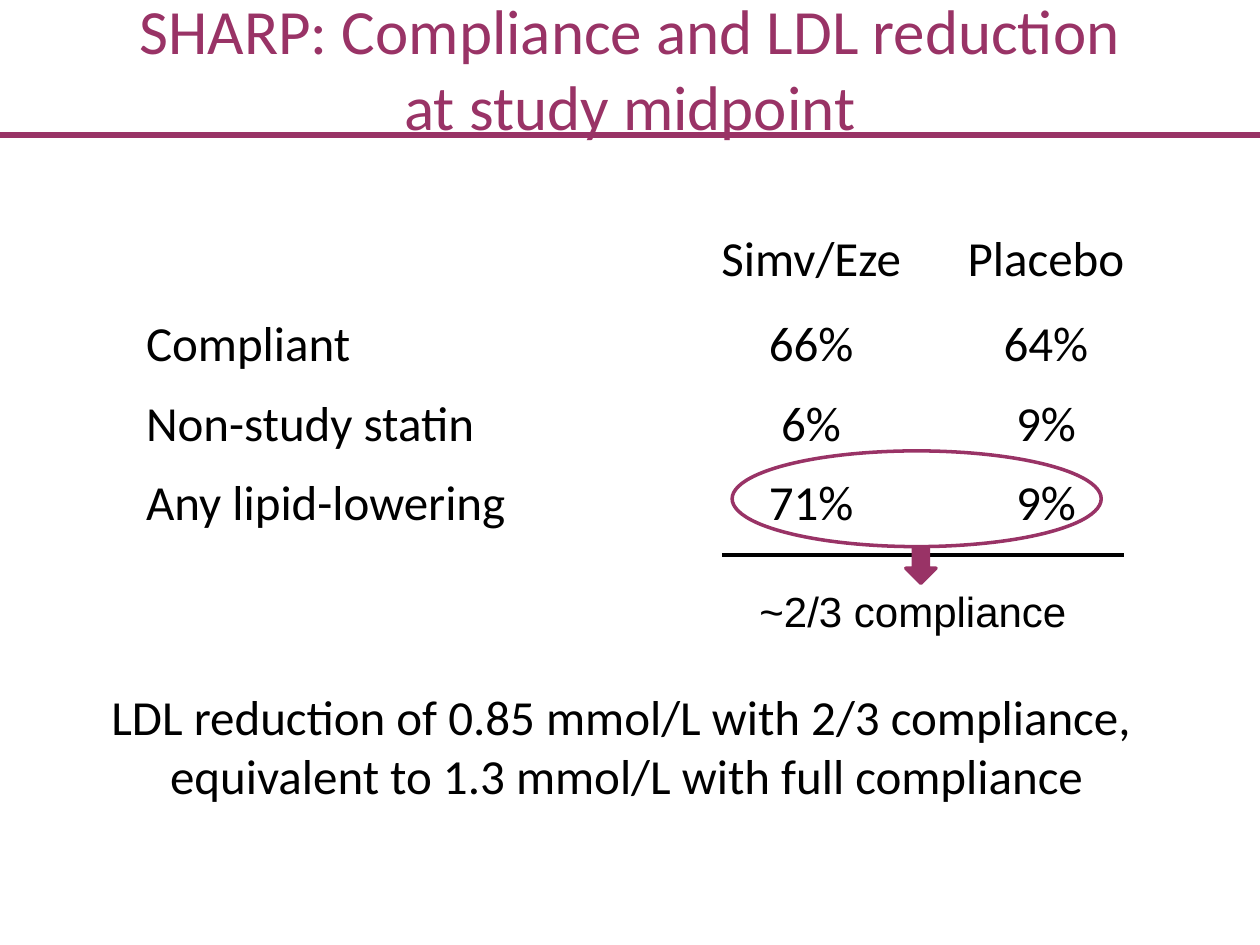
import pptx
import pptx.util
import pptx.dml.color
import pptx.enum.shapes
import pptx.enum.text
import pptx.oxml.ns
import lxml.etree
from dataclasses import dataclass

Cm, Pt = pptx.util.Cm, pptx.util.Pt
Align = pptx.enum.text.PP_ALIGN
Kind = pptx.enum.shapes.MSO_SHAPE

TITLE = "SHARP: Compliance and LDL reduction\vat study midpoint"
ROWS = [
    ("", "Simv/Eze", "Placebo"),
    ("Compliant", "66%", "64%"),
    ("Non-study statin", "6%", "9%"),
    ("Any lipid-lowering", "71%", "9%"),
    ("", "", ""),
]
NOTE = "~2/3 compliance"
RESULT = ("LDL reduction of 0.85 mmol/L with 2/3 compliance, \n"
          "equivalent to 1.3 mmol/L with full compliance")


@dataclass
class Theme:
    plum: str = "993366"
    ink: str = "000000"
    paper: str = "FFFFFF"
    main: str = "Calibri"
    plain: str = "Arial"
    head: float = 36
    body: float = 28
    small: float = 24


theme = Theme()
WIDE, HIGH, BAND = 25.4, 19.05, 2.72
COLS = (11.35, 4.62, 4.85)
TOP, FIRST, STEP = 4.5, 1.73, 1.6


def tint(code):
    return pptx.dml.color.RGBColor.from_string(code)


def style(frame, size, color, face, align):
    for para in frame.paragraphs:
        para.alignment = align
        for run in para.runs:
            run.font.size = Pt(size)
            run.font.name = face
            run.font.bold = False
            run.font.color.rgb = tint(color)


def label(slide, box, text, size, color, face, align, anchor):
    frame = slide.shapes.add_textbox(*map(Cm, box)).text_frame
    frame.word_wrap = True
    frame.vertical_anchor = anchor
    frame.text = text
    style(frame, size, color, face, align)


def rule(slide, left, right, y, color, width):
    line = slide.shapes.add_connector(
        pptx.enum.shapes.MSO_CONNECTOR.STRAIGHT, Cm(left), Cm(y), Cm(right), Cm(y))
    line.line.color.rgb = tint(color)
    line.line.width = Pt(width)
    lxml.etree.SubElement(line.element.spPr, pptx.oxml.ns.qn("a:effectLst"))


def mark(slide, kind, box, fill=None):
    shape = slide.shapes.add_shape(kind, *map(Cm, box))
    shape.shadow.inherit = False
    if fill:
        shape.fill.solid()
        shape.fill.fore_color.rgb = tint(fill)
    else:
        shape.fill.background()
    shape.line.color.rgb = tint(theme.plum)
    shape.line.width = Pt(2)


def grid(slide):
    high = FIRST + STEP * (len(ROWS) - 1)
    table = slide.shapes.add_table(
        len(ROWS), len(COLS), Cm(2.69), Cm(TOP), Cm(sum(COLS)), Cm(high)).table
    table.first_row = False
    table.horz_banding = False
    for col, width in zip(table.columns, COLS):
        col.width = Cm(width)
    for r, texts in enumerate(ROWS):
        table.rows[r].height = Cm(STEP if r else FIRST)
        for c, text in enumerate(texts):
            cell = table.cell(r, c)
            cell.fill.solid()
            cell.fill.fore_color.rgb = tint(theme.paper)
            cell.text_frame.text = text
            style(cell.text_frame, theme.body, theme.ink, theme.main,
                  Align.CENTER if c else Align.LEFT)
    last = len(ROWS) - 1
    table.cell(last, 1).merge(table.cell(last, 2))


def main():
    deck = pptx.Presentation()
    deck.slide_width, deck.slide_height = Cm(WIDE), Cm(HIGH)
    slide = deck.slides.add_slide(deck.slide_layouts[6])
    anchor = pptx.enum.text.MSO_ANCHOR
    rule(slide, 0, WIDE, BAND, theme.plum, 3)
    label(slide, (0, 0, WIDE, BAND), TITLE, theme.head, theme.plum,
          theme.main, Align.CENTER, anchor.MIDDLE)
    grid(slide)
    rule(slide, 14.55, 22.66, 11.18, theme.ink, 2.25)
    mark(slide, Kind.OVAL, (14.76, 9.09, 7.44, 1.93))
    mark(slide, Kind.DOWN_ARROW, (18.26, 11.05, 0.61, 0.71), theme.plum)
    label(slide, (15.06, 11.68, 7.01, 1.3), NOTE, theme.small, theme.ink,
          theme.plain, Align.LEFT, anchor.TOP)
    label(slide, (0.64, 13.72, 23.98, 3.43), RESULT, theme.body, theme.ink,
          theme.main, Align.CENTER, anchor.TOP)
    deck.save("out.pptx")


if __name__ == "__main__":
    main()
